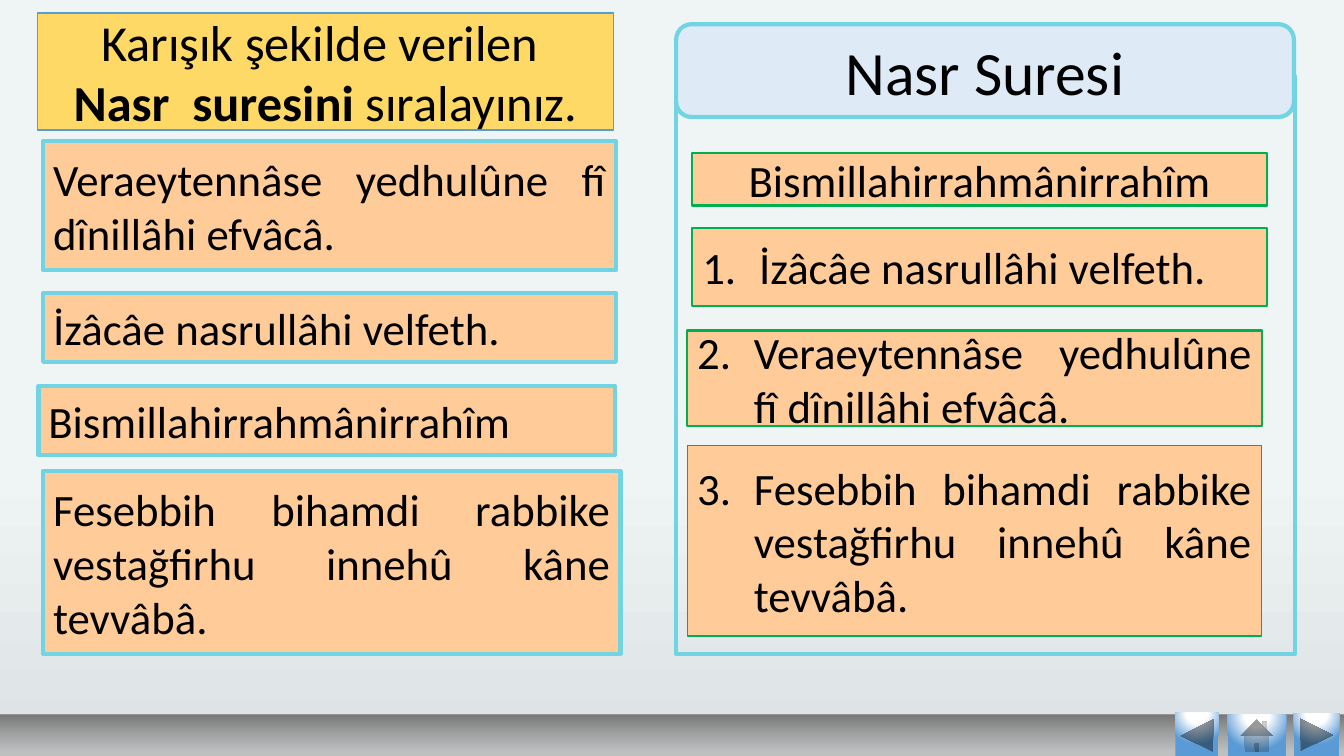
from lxml import etree
from pptx import Presentation
from pptx.dml.color import RGBColor
from pptx.enum.shapes import MSO_SHAPE
from pptx.enum.text import MSO_ANCHOR, PP_ALIGN
from pptx.oxml import parse_xml
from pptx.oxml.ns import nsdecls, qn
from pptx.util import Cm, Pt

RECT, ROUND = MSO_SHAPE.RECTANGLE, MSO_SHAPE.ROUNDED_RECTANGLE
BACK = MSO_SHAPE.ACTION_BUTTON_BACK_OR_PREVIOUS
HOME = MSO_SHAPE.ACTION_BUTTON_HOME
NEXT = MSO_SHAPE.ACTION_BUTTON_FORWARD_OR_NEXT
CENTER, JUST = PP_ALIGN.CENTER, PP_ALIGN.JUSTIFY
MIDDLE = MSO_ANCHOR.MIDDLE


class Theme:
    font = "Calibri"
    ink = "000000"
    aqua, blue, green = "72D4E3", "5B9BD5", "00B050"
    gold, peach, pale = "FFD966", "FFCC99", "DEEBF7"
    sky = [(62, "EFF4F5", 100), (100, "DCE1E4", 100)]
    steel = [(0, "C0C0C0", 100), (17, "B3B3B3", 70), (100, "777777", 100)]
    glow = [(0, "FFFFFF", 100), (35, "FFFFFF", 100), (100, "5B9BD5", 100)]
    card, title, head = 32, 36, 44


def shade(fill, root, stops, path):
    fill.gradient()
    old = root.find(".//" + qn("a:gradFill"))
    marks = "".join(
        f'<a:gs pos="{pos * 1000}"><a:srgbClr val="{hue}">'
        f'<a:alpha val="{alpha * 1000}"/></a:srgbClr></a:gs>'
        for pos, hue, alpha in stops)
    new = parse_xml(f'<a:gradFill {nsdecls("a")} rotWithShape="1">'
                    f"<a:gsLst>{marks}</a:gsLst>{path}</a:gradFill>")
    old.getparent().replace(old, new)


def box(kind, place, fill, line, width, lines=(), size=Theme.card, align=JUST):
    shape = slide.shapes.add_shape(kind, *map(Cm, place))
    shape.shadow.inherit = False
    if fill:
        shape.fill.solid()
        shape.fill.fore_color.rgb = RGBColor.from_string(fill)
    else:
        shape.fill.background()
    if line:
        shape.line.color.rgb = RGBColor.from_string(line)
        shape.line.width = Pt(width)
    else:
        shape.line.fill.background()
    frame = shape.text_frame
    frame.word_wrap = True
    frame.vertical_anchor = MIDDLE
    for i, (start, runs) in enumerate(lines):
        para = frame.add_paragraph() if i else frame.paragraphs[0]
        para.alignment = align
        if start:
            props = para._p.get_or_add_pPr()
            props.set("marL", str(Cm(1.43)))
            props.set("indent", str(-Cm(1.43)))
            etree.SubElement(props, qn("a:buFont"), typeface="+mj-lt")
            etree.SubElement(props, qn("a:buAutoNum"),
                             type="arabicPeriod", startAt=str(start))
        para.font.name = Theme.font
        para.font.size = Pt(size)
        para.font.color.rgb = RGBColor.from_string(Theme.ink)
        for text, bold in runs:
            run = para.add_run()
            run.text = text
            if bold:
                run.font.bold = True
    return shape


deck = Presentation()
deck.slide_width, deck.slide_height = Cm(33.87), Cm(19.05)
slide = deck.slides.add_slide(deck.slide_layouts[6])
shade(slide.background.fill, slide.element, Theme.sky,
      '<a:lin ang="5400000" scaled="0"/>')

box(RECT, (17.04, 1.93, 15.6, 14.55), None, Theme.aqua, 3)
box(RECT, (0.94, 0.33, 14.53, 2.95), Theme.gold, Theme.blue, 1,
    [(0, [("Karışık şekilde verilen ", False)]),
     (0, [("Nasr  suresini ", True), ("sıralayınız.", False)])],
    Theme.title, CENTER)
box(ROUND, (17.04, 0.61, 15.57, 2.34), Theme.pale, Theme.aqua, 3,
    [(0, [("Nasr Suresi", False)])], Theme.head, CENTER)

opening = "Bismillahirrahmânirrahîm"
verses = ["İzâcâe nasrullâhi velfeth.",
          "Veraeytennâse yedhulûne fî dînillâhi efvâcâ.",
          "Fesebbih bihamdi rabbike vestağfirhu innehû kâne tevvâbâ."]

mixed = [(verses[1], (1.09, 3.56, 14.43, 3.25)),
         (verses[0], (1.09, 7.39, 14.43, 1.73)),
         (opening, (0.97, 9.73, 14.53, 1.73)),
         (verses[2], (1.09, 11.86, 14.55, 4.62))]
for text, place in mixed:
    box(RECT, place, Theme.peach, Theme.aqua, 3, [(0, [(text, False)])])

sorted_rows = [(17.45, 3.86, 1.32, 1.5), (17.45, 5.74, 1.98, 1.5),
               (17.32, 8.33, 2.41, 1.5), (17.32, 11.23, 4.8, 1)]
for number, (text, row) in enumerate(zip([opening] + verses, sorted_rows)):
    left, top, height, width = row
    box(RECT, (left, top, 14.48, height), Theme.peach, Theme.green, width,
        [(number, [(text, False)])], align=JUST if number else CENTER)

bar = box(RECT, (0, 18.01, 33.87, 1.12), None, None, 0)
shade(bar.fill, bar.element, Theme.steel, '<a:lin ang="16200000" scaled="0"/>')

for kind, place in [(BACK, (29.62, 17.96, 1.09, 1.17)),
                    (NEXT, (32.61, 17.98, 1.14, 1.09)),
                    (HOME, (30.94, 18.01, 1.47, 1.07))]:
    button = box(kind, place, None, None, 0)
    shade(button.fill, button.element, Theme.glow,
          '<a:path path="circle"><a:fillToRect l="50000" t="-80000" '
          'r="50000" b="180000"/></a:path>')

deck.save("out.pptx")
